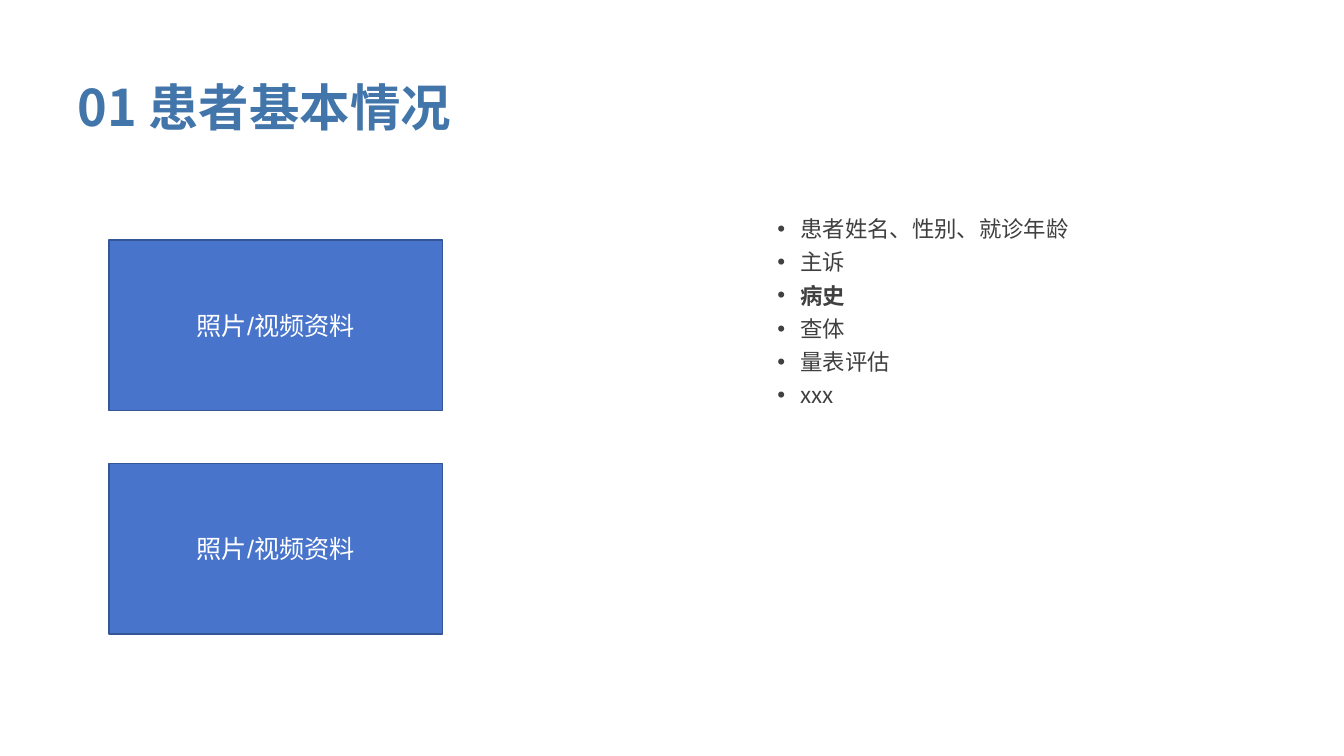
from lxml import etree
from pptx import Presentation
from pptx.dml.color import RGBColor
from pptx.enum.shapes import MSO_SHAPE
from pptx.enum.text import MSO_ANCHOR, PP_ALIGN
from pptx.oxml.ns import qn
from pptx.util import Pt

RECTANGLE = MSO_SHAPE.RECTANGLE
TOP = MSO_ANCHOR.TOP
MIDDLE = MSO_ANCHOR.MIDDLE
LEFT = PP_ALIGN.LEFT
CENTER = PP_ALIGN.CENTER
EMU_PER_PX = 9144


def px(length):
    return length * EMU_PER_PX


def color(value):
    return RGBColor.from_string(value)


def write(para, text, font, size, ink, bold=False, align=LEFT):
    para.alignment = align
    span = para.add_run()
    span.text = text
    span.font.name = font
    span.font.size = Pt(size)
    span.font.bold = bold
    span.font.color.rgb = color(ink)
    east_asian = etree.SubElement(span.font._element, qn("a:ea"))
    east_asian.set("typeface", "Noto Sans CJK SC")


class CasePage:
    heading_font = "Noto Sans CJK SC"
    panel_font = "Arial"
    title_ink = "4275AA"
    body_ink = "404040"
    panel_fill = "4874CB"
    panel_line = "355696"
    panel_ink = "FFFFFF"

    def __init__(self, deck):
        self.page = deck.slides.add_slide(deck.slide_layouts[6])

    def text_frame(self, left, top, width, height, anchor, inset_x, inset_y):
        box = self.page.shapes.add_textbox(px(left), px(top), px(width), px(height))
        frame = box.text_frame
        frame.word_wrap = True
        frame.vertical_anchor = anchor
        frame.margin_left = frame.margin_right = px(inset_x)
        frame.margin_top = frame.margin_bottom = px(inset_y)
        return frame

    def title(self, text, left, top, width, height):
        frame = self.text_frame(left, top, width, height, MIDDLE, 10, 5)
        write(frame.paragraphs[0], text, self.heading_font, 36, self.title_ink, bold=True)

    def panel(self, text, left, top, width, height):
        box = self.page.shapes.add_shape(RECTANGLE, px(left), px(top), px(width), px(height))
        box.shadow.inherit = False
        box.fill.solid()
        box.fill.fore_color.rgb = color(self.panel_fill)
        box.line.color.rgb = color(self.panel_line)
        box.line.width = Pt(1)
        frame = box.text_frame
        frame.word_wrap = True
        frame.vertical_anchor = MIDDLE
        write(frame.paragraphs[0], text, self.panel_font, 18, self.panel_ink, align=CENTER)

    def bullets(self, items, bold_items, left, top, width, height):
        frame = self.text_frame(left, top, width, height, TOP, 7, 4)
        for index, item in enumerate(items):
            para = frame.add_paragraph() if index else frame.paragraphs[0]
            para.line_spacing = 1.24
            write(para, item, self.heading_font, 16, self.body_ink, bold=item in bold_items)
            properties = para._p.get_or_add_pPr()
            properties.set("marL", str(px(23)))
            properties.set("indent", str(px(-23)))
            bullet_font = etree.SubElement(properties, qn("a:buFont"))
            bullet_font.set("typeface", "Arial")
            bullet = etree.SubElement(properties, qn("a:buChar"))
            bullet.set("char", "•")


def main():
    deck = Presentation()
    deck.slide_width = px(1333)
    deck.slide_height = px(750)
    page = CasePage(deck)
    page.title("01 患者基本情况", 67, 67, 1200, 77)
    for row in range(2):
        page.panel("照片/视频资料", 108, 238 + row * 222, 331, 169)
    page.bullets(
        ["患者姓名、性别、就诊年龄", "主诉", "病史", "查体", "量表评估", "xxx"],
        {"病史"}, 764, 203, 519, 344,
    )
    deck.save("out.pptx")


if __name__ == "__main__":
    main()
